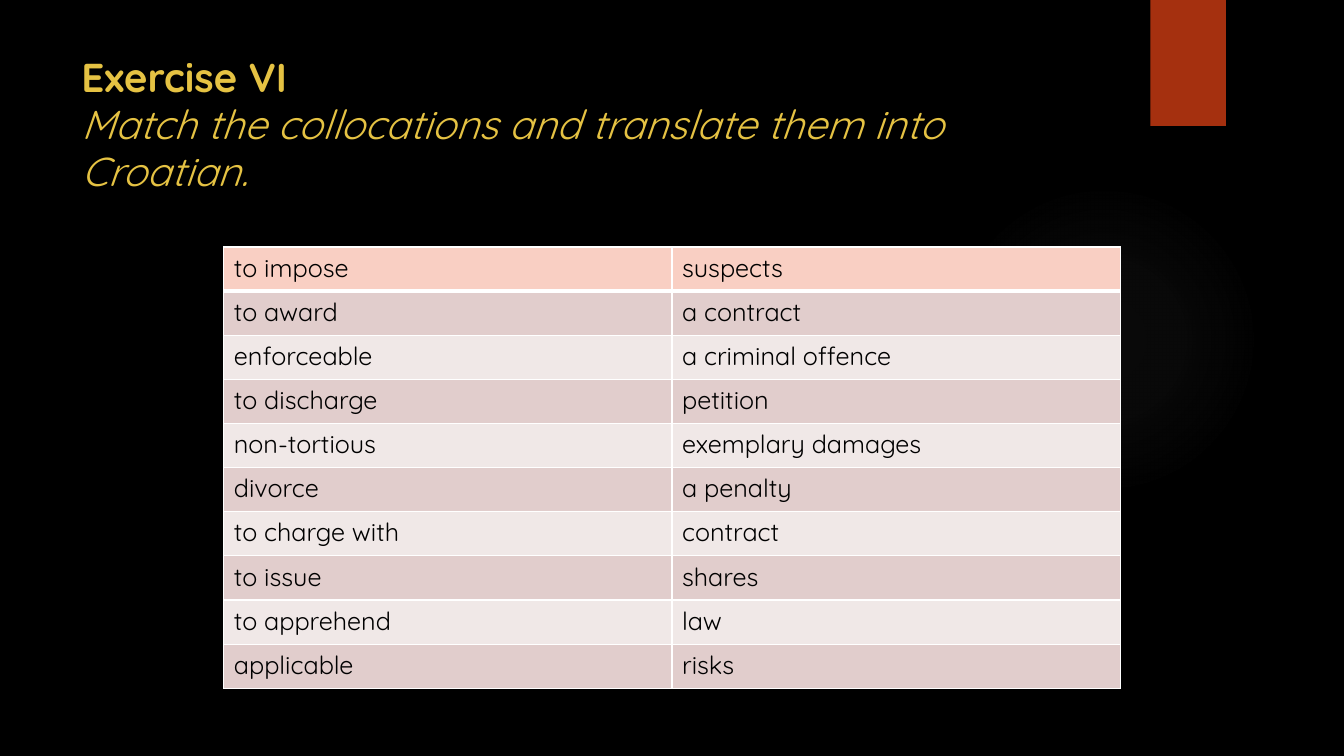
from dataclasses import dataclass

from lxml.etree import SubElement as Sub
from pptx import Presentation
from pptx.dml.color import RGBColor as Rgb
from pptx.enum.shapes import MSO_SHAPE as Kind
from pptx.enum.text import MSO_ANCHOR as Anchor
from pptx.oxml.ns import qn
from pptx.util import Inches, Pt


@dataclass(frozen=True)
class Theme:
    font: str = "Quicksand"
    back: str = "000000"
    glow: str = "848484"
    ribbon: str = "A5300F"
    title: str = "E5C243"
    text: str = "000000"
    line: str = "FFFFFF"
    head: str = "F9CFC3"
    bands: tuple = ("F0E8E7", "E1CDCC")
    big: float = 28.8
    body: float = 18


PAIRS = [
    ("to impose", "suspects"),
    ("to award", "a contract"),
    ("enforceable", "a criminal offence"),
    ("to discharge", "petition"),
    ("non-tortious", "exemplary damages"),
    ("divorce", "a penalty"),
    ("to charge with", "contract"),
    ("to issue", "shares"),
    ("to apprehend", "law"),
    ("applicable", "risks"),
]


def write(para, text, font, size, color, bold=False, italic=False):
    run = para.add_run()
    run.text = text
    face = run.font
    face.name, face.size = font, Pt(size)
    face.bold, face.italic = bold, italic
    face.color.rgb = Rgb.from_string(color)


def paint(fill, color):
    fill.solid()
    fill.fore_color.rgb = Rgb.from_string(color)


class Page:
    def __init__(self, deck, theme):
        self.theme = theme
        self.slide = deck.slides.add_slide(deck.slide_layouts[6])
        paint(self.slide.background.fill, theme.back)

    def shape(self, kind, box, color):
        item = self.slide.shapes.add_shape(kind, *map(Inches, box))
        item.shadow.inherit = False
        item.line.fill.background()
        paint(item.fill, color)
        return item

    def glow(self, box, stops):
        """Draw a round glow; stops are (place, opacity) in percent."""
        color = self.theme.glow
        item = self.shape(Kind.OVAL, box, color)
        props = item._element.spPr
        solid = props.find(qn("a:solidFill"))
        grad = props.makeelement(qn("a:gradFill"), {"rotWithShape": "1"})
        props.replace(solid, grad)
        stop_list = Sub(grad, qn("a:gsLst"))
        for place, alpha in stops:
            stop = Sub(stop_list, qn("a:gs"), pos=str(place * 1000))
            tone = Sub(stop, qn("a:srgbClr"), val=color)
            Sub(tone, qn("a:alpha"), val=str(alpha * 1000))
        focus = Sub(grad, qn("a:path"), {"path": "circle"})
        Sub(focus, qn("a:fillToRect"), dict.fromkeys("ltrb", "50000"))

    def title(self, box, head, task):
        frame = self.slide.shapes.add_textbox(*map(Inches, box)).text_frame
        frame.word_wrap = True
        frame.vertical_anchor = Anchor.TOP
        para = frame.paragraphs[0]
        para.line_spacing = 0.97
        look = dict(font=self.theme.font, size=self.theme.big,
                    color=self.theme.title)
        write(para, head, bold=True, **look)
        para.add_line_break()
        write(para, task, italic=True, **look)

    def border(self, cell, widths):
        """Draw cell edges; widths maps L, R, T, B to points, in that order."""
        props = cell._tc.get_or_add_tcPr()
        for side, width in widths.items():
            edge = Sub(props, qn(f"a:ln{side}"), w=str(Pt(width)))
            fill = Sub(edge, qn("a:solidFill"))
            Sub(fill, qn("a:srgbClr"), val=self.theme.line)

    def table(self, box, rows):
        theme = self.theme
        grid = self.slide.shapes.add_table(
            len(rows), len(rows[0]), *map(Inches, box)).table
        grid.first_row = grid.horz_banding = False
        for r, row in enumerate(rows):
            color = theme.bands[r % 2] if r else theme.head
            top, low = (3 if r == 1 else 1), (1 if r else 3)
            for c, text in enumerate(row):
                cell = grid.cell(r, c)
                self.border(cell, dict(L=1, R=1, T=top, B=low))
                paint(cell.fill, color)
                write(cell.text_frame.paragraphs[0], text, theme.font,
                      theme.body, theme.text)


def main():
    deck = Presentation()
    deck.slide_width, deck.slide_height = Inches(13.33), Inches(7.5)
    theme = Theme()
    page = Page(deck, theme)
    page.glow((9.41, 1.83, 3.08, 3.08), [(0, 7), (36, 6), (69, 0)])
    page.shape(Kind.RECTANGLE, (11.41, 0, 0.75, 1.25), theme.ribbon)
    page.title((0.71, 0.5, 10.29, 1.53), "Exercise VI",
               "Match the collocations and translate them into Croatian.")
    page.table((2.22, 2.45, 8.89, 4.38), PAIRS)
    deck.save("out.pptx")


if __name__ == "__main__":
    main()
